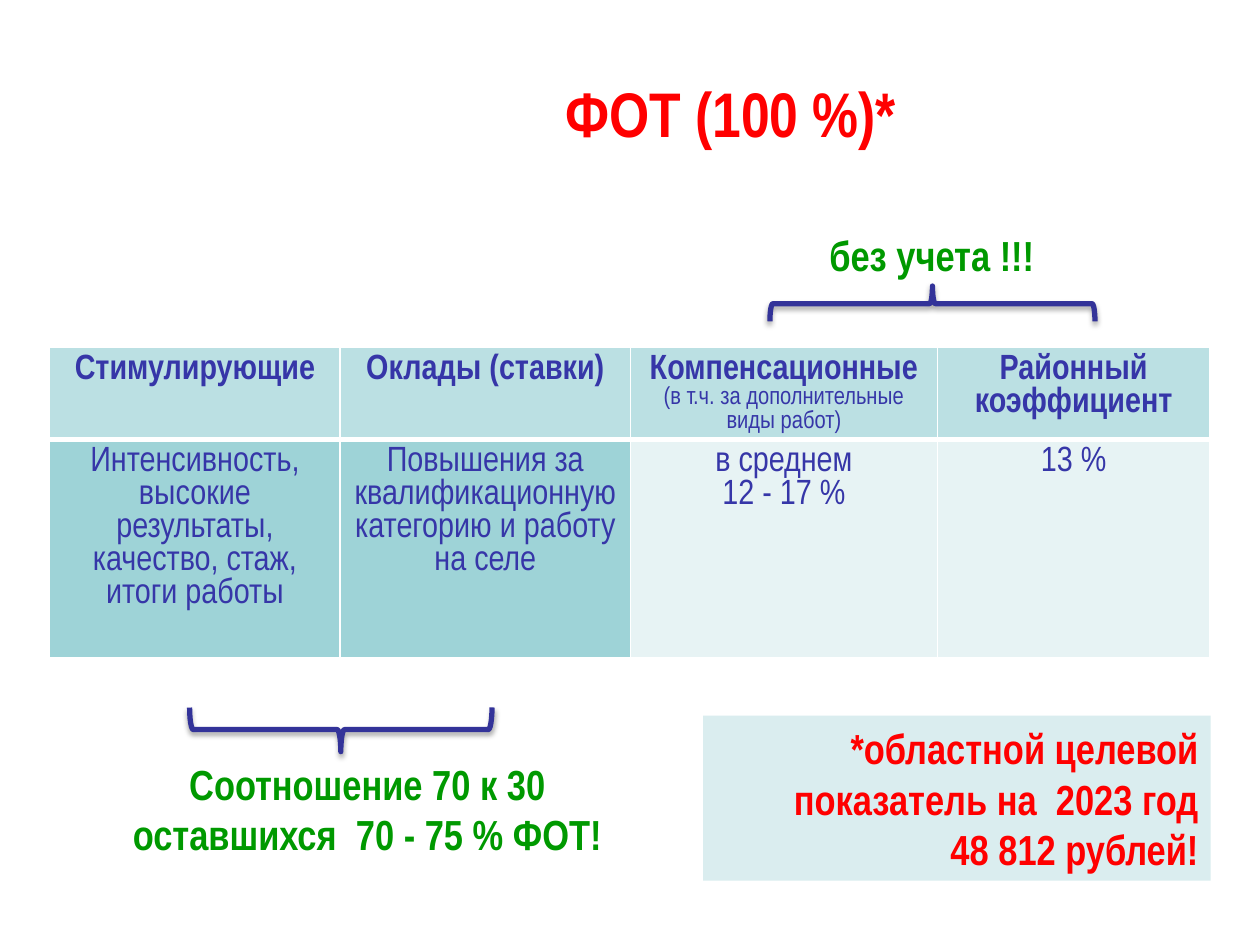
from dataclasses import dataclass

from lxml import etree
from pptx import Presentation
from pptx.dml.color import RGBColor
from pptx.enum.shapes import MSO_SHAPE
from pptx.enum.text import MSO_ANCHOR, PP_ALIGN
from pptx.oxml import parse_xml
from pptx.oxml.ns import nsdecls, qn
from pptx.util import Inches, Pt

CENTER, RIGHT = PP_ALIGN.CENTER, PP_ALIGN.RIGHT
MIDDLE = MSO_ANCHOR.MIDDLE
LEFT_BRACE, RECTANGLE = MSO_SHAPE.LEFT_BRACE, MSO_SHAPE.RECTANGLE

RED = RGBColor(0xFF, 0x00, 0x00)
GREEN = RGBColor(0x00, 0x99, 0x00)
INDIGO = RGBColor(0x33, 0x33, 0x99)
TABLE_TEXT = RGBColor(0x36, 0x36, 0xA8)
HEADER_FILL = RGBColor(0xBB, 0xE0, 0xE3)
STRONG_FILL = RGBColor(0x9E, 0xD3, 0xD7)
PALE_FILL = RGBColor(0xE7, 0xF3, 0xF4)
NOTE_FILL = RGBColor(0xDA, 0xED, 0xEF)

FONT = "Arial Narrow"
GRID_COLUMNS, GRID_ROWS = 100, 75
SLIDE_WIDTH, SLIDE_HEIGHT = Inches(10), Inches(7.5)


@dataclass(frozen=True)
class Area:
    """A rectangle in columns and rows of the slide grid."""
    left: float
    top: float
    width: float
    height: float

    def lengths(self) -> tuple:
        return (across(self.left), down(self.top),
                across(self.width), down(self.height))


@dataclass(frozen=True)
class PayPart:
    """One table column: a kind of pay and what it covers."""
    heading: str
    detail: str
    fill: RGBColor
    width: float
    remark: str = ""


@dataclass(frozen=True)
class Brace:
    area: Area
    rotation: int


@dataclass(frozen=True)
class Caption:
    area: Area
    text: str


TITLE_AREA = Area(21.7, 4.7, 72.6, 8.4)
TABLE_AREA = Area(3.95, 27.6, 92.1, 24.5)
TABLE_ROWS = (7.2, 17.3)
NOTE_AREA = Area(55.8, 56.8, 40.3, 13.1)

PAY_PARTS = (
    PayPart("Стимулирующие",
            "Интенсивность, высокие результаты, качество, стаж, итоги работы",
            STRONG_FILL, 23.05),
    PayPart("Оклады (ставки)",
            "Повышения за квалификационную категорию и работу на селе",
            STRONG_FILL, 23.05),
    PayPart("Компенсационные", "в среднем\n12 - 17 %", PALE_FILL, 24.35,
            " (в т.ч. за дополнительные виды работ)"),
    PayPart("Районный коэффициент", "13 %", PALE_FILL, 21.65),
)
BRACES = (
    Brace(Area(72.6, 11.2, 2.8, 25.8), 90),
    Brace(Area(25.3, 45.9, 3.5, 24), 270),
)
CAPTIONS = (
    Caption(Area(62.2, 17.7, 23.5, 5), "без учета !!!"),
    Caption(Area(8.3, 59.7, 41.7, 9.1),
            "Соотношение 70 к 30 оставшихся  70 - 75 % ФОТ!"),
)


def across(columns: float) -> int:
    return round(SLIDE_WIDTH * columns / GRID_COLUMNS)


def down(rows: float) -> int:
    return round(SLIDE_HEIGHT * rows / GRID_ROWS)


def write(frame, text: str, size: int, color: RGBColor,
          bold: bool = True, align=CENTER) -> None:
    frame.word_wrap = True
    frame.text = text
    for paragraph in frame.paragraphs:
        paragraph.alignment = align
        font = paragraph.font
        font.name, font.size, font.bold = FONT, Pt(size), bold
        font.color.rgb = color


def set_borders(cell, top: float, bottom: float) -> None:
    """Give the cell white borders, 1 pt at the sides."""
    properties = cell._tc.get_or_add_tcPr()
    widths = (("lnL", 1), ("lnR", 1), ("lnT", top), ("lnB", bottom))
    for index, (tag, width) in enumerate(widths):
        line = etree.Element(qn(f"a:{tag}"), w=str(Pt(width)))
        fill = etree.SubElement(line, qn("a:solidFill"))
        etree.SubElement(fill, qn("a:srgbClr"), val="FFFFFF")
        properties.insert(index, line)


def fill_cell(cell, text: str, fill: RGBColor, bold: bool,
              top: float, bottom: float) -> None:
    cell.fill.solid()
    cell.fill.fore_color.rgb = fill
    set_borders(cell, top, bottom)
    write(cell.text_frame, text, 20, TABLE_TEXT, bold)


def draw_pay_table(slide) -> None:
    table = slide.shapes.add_table(
        len(TABLE_ROWS), len(PAY_PARTS), *TABLE_AREA.lengths()).table
    table.horz_banding = False
    for row, height in zip(table.rows, TABLE_ROWS):
        row.height = down(height)
    for index, part in enumerate(PAY_PARTS):
        table.columns[index].width = across(part.width)
        header = table.cell(0, index)
        fill_cell(header, part.heading, HEADER_FILL, True, 1, 3)
        fill_cell(table.cell(1, index), part.detail, part.fill, False, 3, 1)
        if part.remark:
            span = header.text_frame.paragraphs[0].add_run()
            span.text = part.remark
            span.font.size, span.font.bold = Pt(14), False


def draw_brace(slide, brace: Brace) -> None:
    shape = slide.shapes.add_shape(LEFT_BRACE, *brace.area.lengths())
    shape.rotation = brace.rotation
    shape.fill.background()
    shape.line.color.rgb = INDIGO
    shape.line.width = Pt(3)
    shape.shadow.inherit = False
    effects = shape._element.spPr.find(qn("a:effectLst"))
    effects.append(parse_xml(
        f'<a:outerShdw {nsdecls("a")} blurRad="{Pt(3.1)}" dist="{Pt(1.8)}" '
        'dir="5400000" rotWithShape="0"><a:srgbClr val="000000">'
        '<a:alpha val="35000"/></a:srgbClr></a:outerShdw>'))


def draw_caption(slide, caption: Caption) -> None:
    box = slide.shapes.add_textbox(*caption.area.lengths())
    write(box.text_frame, caption.text, 24, GREEN)


def draw_note(slide) -> None:
    box = slide.shapes.add_shape(RECTANGLE, *NOTE_AREA.lengths())
    box.shadow.inherit = False
    box.fill.solid()
    box.fill.fore_color.rgb = NOTE_FILL
    box.line.fill.background()
    write(box.text_frame,
          "*областной целевой показатель на  2023 год\n48 812 рублей!",
          24, RED, align=RIGHT)


def main() -> None:
    deck = Presentation()
    deck.slide_width, deck.slide_height = SLIDE_WIDTH, SLIDE_HEIGHT
    slide = deck.slides.add_slide(deck.slide_layouts[5])
    title = slide.shapes.title
    title.left, title.top, title.width, title.height = TITLE_AREA.lengths()
    title.text_frame.vertical_anchor = MIDDLE
    write(title.text_frame, "ФОТ (100 %)*", 36, RED)
    draw_pay_table(slide)
    for brace, caption in zip(BRACES, CAPTIONS):
        draw_brace(slide, brace)
        draw_caption(slide, caption)
    draw_note(slide)
    deck.save("out.pptx")


if __name__ == "__main__":
    main()
